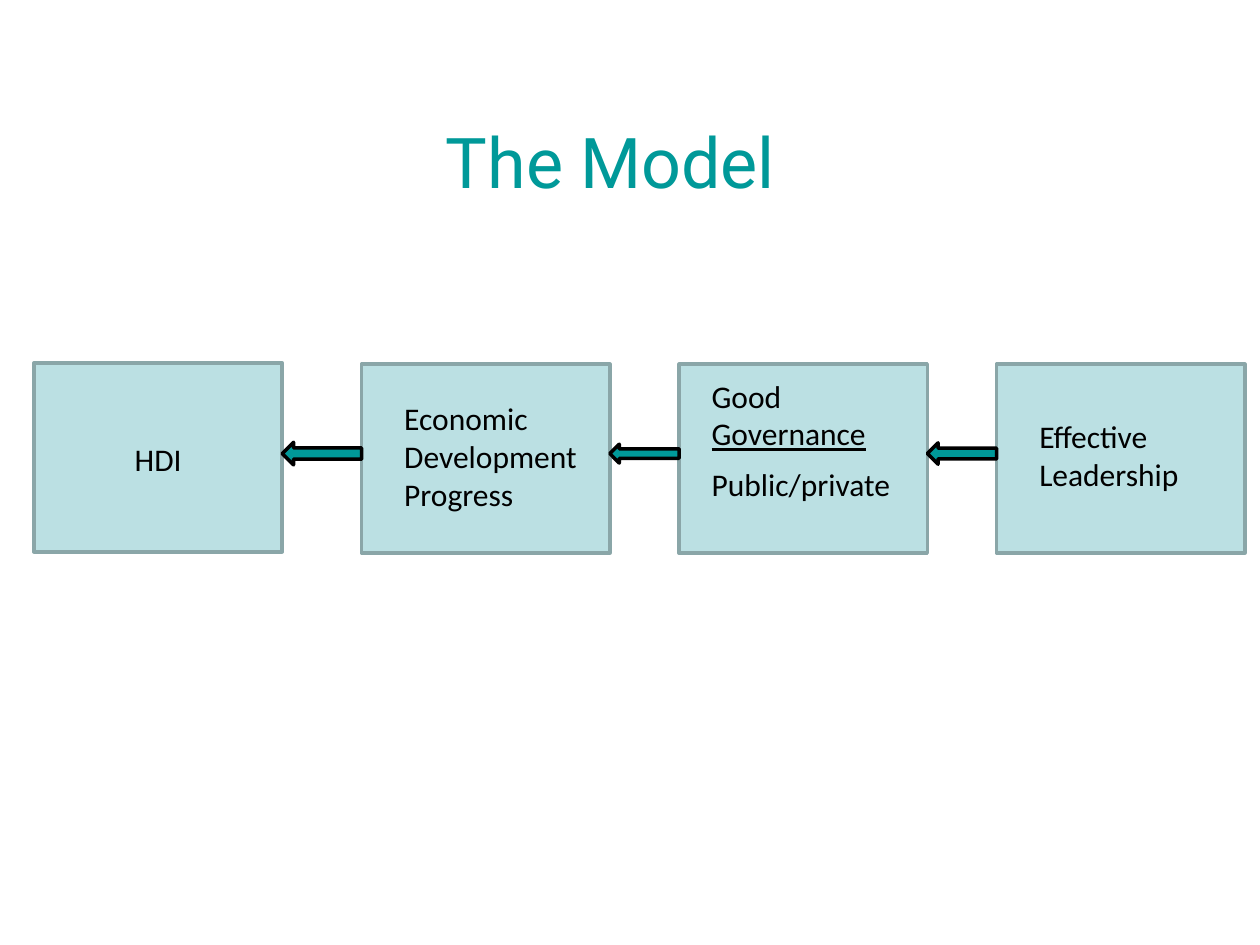
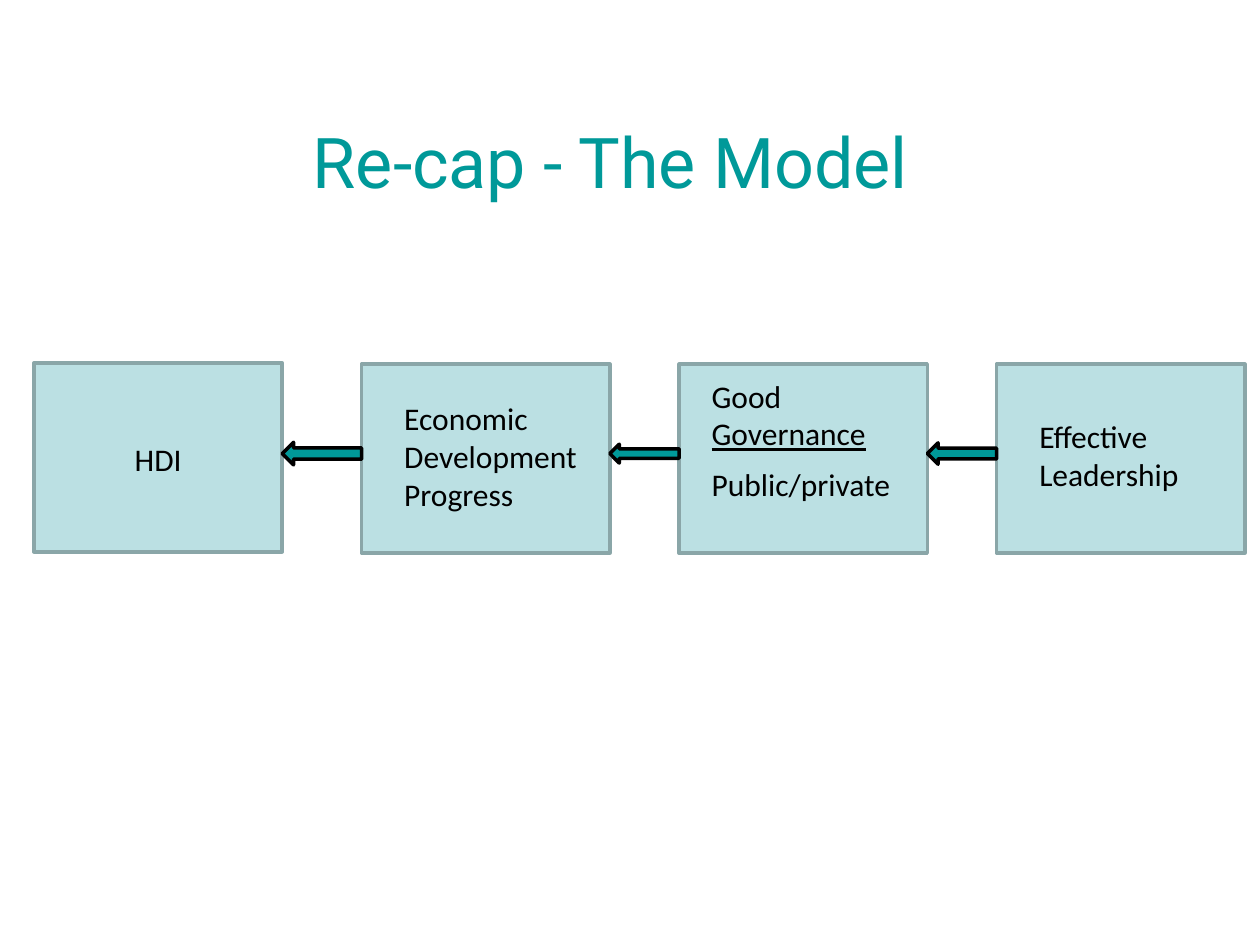
from dataclasses import dataclass
from pptx import Presentation
from pptx.dml.color import RGBColor
from pptx.enum.shapes import MSO_SHAPE
from pptx.enum.text import MSO_ANCHOR, MSO_AUTO_SIZE, PP_ALIGN
from pptx.util import Inches, Pt

TITLES = ["The Model", "Re-cap - The Model"]
BOXES = [(0.27, 2.88), (2.87, 2.89), (5.39, 2.89), (7.91, 2.89)]
BOX_W, BOX_H = 1.97, 1.5
ARROW_HEIGHTS = [0.18, 0.15, 0.17]
ARROW_MIDDLE = 3.6
LABELS = [
    (["HDI"], (0.51, 3.44, 1.49, 0.4), PP_ALIGN.CENTER),
    (["Economic Development Progress"], (3.11, 3.12, 1.58, 1.01), PP_ALIGN.LEFT),
    (["Good ", "Governance"], (5.55, 2.94, 1.73, 0.71), PP_ALIGN.LEFT),
    (["Public/private"], (5.55, 3.64, 1.65, 0.4), PP_ALIGN.LEFT),
    (["Effective Leadership"], (8.15, 3.26, 1.5, 0.71), PP_ALIGN.LEFT),
]
UNDERLINED = {"Governance"}


@dataclass(frozen=True)
class Theme:
    teal: RGBColor = RGBColor.from_string("009999")
    pale: RGBColor = RGBColor.from_string("BBE0E3")
    border: RGBColor = RGBColor.from_string("8AA6A8")
    black: RGBColor = RGBColor.from_string("000000")
    title_font: str = "Roboto"
    body_font: str = "Calibri"
    title_size: int = 40
    body_size: int = 18
    line_width: int = 2


THEME = Theme()


def write(p, text, *, font, size, color, align, underline=None):
    p.alignment = align
    r = p.add_run()
    r.text = text
    r.font.name = font
    r.font.size = Pt(size)
    r.font.color.rgb = color
    r.font.underline = underline


def add_block(s, kind, at, *, fill, line):
    sp = s.shapes.add_shape(kind, *map(Inches, at))
    sp.shadow.inherit = False
    sp.fill.solid()
    sp.fill.fore_color.rgb = fill
    sp.line.color.rgb = line
    sp.line.width = Pt(THEME.line_width)


def add_title(s, text):
    sp = s.shapes.title
    sp.left, sp.top, sp.width, sp.height = map(Inches, (1.46, 0.65, 6.77, 1.25))
    tf = sp.text_frame
    tf.vertical_anchor = MSO_ANCHOR.MIDDLE
    write(tf.paragraphs[0], text, font=THEME.title_font, size=THEME.title_size,
          color=THEME.teal, align=PP_ALIGN.CENTER)


def add_label(s, parts, at, align):
    tf = s.shapes.add_textbox(*map(Inches, at)).text_frame
    tf.word_wrap = True
    tf.auto_size = MSO_AUTO_SIZE.SHAPE_TO_FIT_TEXT
    for text in parts:
        write(tf.paragraphs[0], text, font=THEME.body_font, size=THEME.body_size,
              color=THEME.black, align=align, underline=text in UNDERLINED or None)


def add_model(s):
    for x, y in BOXES:
        add_block(s, MSO_SHAPE.RECTANGLE, (x, y, BOX_W, BOX_H),
                  fill=THEME.pale, line=THEME.border)
    for label in LABELS:
        add_label(s, *label)
    for (x, _), (next_x, _), h in zip(BOXES, BOXES[1:], ARROW_HEIGHTS):
        start = x + BOX_W
        add_block(s, MSO_SHAPE.LEFT_ARROW,
                  (start, ARROW_MIDDLE - h / 2, next_x - start, h),
                  fill=THEME.teal, line=THEME.black)


def main():
    prs = Presentation()
    prs.slide_width, prs.slide_height = Inches(10), Inches(7.5)
    for title in TITLES:
        s = prs.slides.add_slide(prs.slide_layouts.get_by_name("Title Only"))
        add_title(s, title)
        add_model(s)
    prs.save("out.pptx")


if __name__ == "__main__":
    main()
